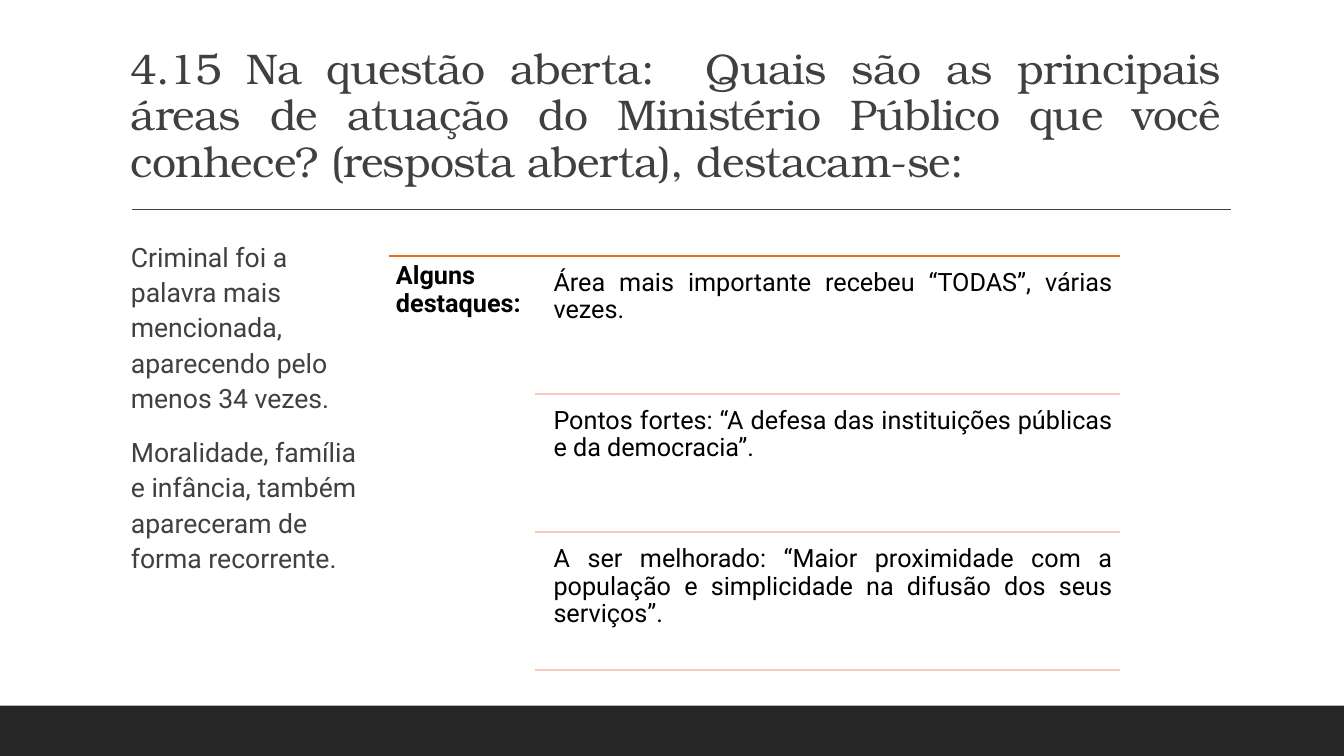
from dataclasses import dataclass

from lxml import etree
from pptx import Presentation
from pptx.dml.color import RGBColor
from pptx.enum.shapes import MSO_CONNECTOR, MSO_SHAPE
from pptx.enum.text import MSO_ANCHOR, PP_ALIGN
from pptx.oxml.ns import qn
from pptx.slide import Slide
from pptx.util import Cm, Pt

STRAIGHT = MSO_CONNECTOR.STRAIGHT
RECTANGLE = MSO_SHAPE.RECTANGLE
TOP, BOTTOM = MSO_ANCHOR.TOP, MSO_ANCHOR.BOTTOM
LEFT, JUSTIFY = PP_ALIGN.LEFT, PP_ALIGN.JUSTIFY


@dataclass(frozen=True)
class Theme:
    title_font: str = "TeX Gyre Bonum"
    body_font: str = "Roboto"
    title_size: float = 30.6
    body_size: float = 19
    panel_size: float = 18
    footer: str = "262626"
    grey: str = "404040"
    black: str = "000000"
    accent: str = "EC7016"
    pale: str = "F6C9BD"


THEME = Theme()


@dataclass(frozen=True)
class TextStyle:
    font: str
    size: float
    color: str
    align: PP_ALIGN = LEFT
    bold: bool = False
    line_spacing: float = 0.9
    before: float = 0
    after: float = 0
    tracking: int = 0  # hundredths of a point


@dataclass(frozen=True)
class TextBlock:
    left: float
    top: float
    width: float
    height: float
    paragraphs: tuple[str, ...]
    style: TextStyle
    inset_x: float = 0.18
    inset_y: float = 0.18
    anchor: MSO_ANCHOR = TOP


@dataclass(frozen=True)
class Rule:
    left: float
    right: float
    y: float
    color: str
    weight: float = 1.25


TITLE = TextStyle(THEME.title_font, THEME.title_size, THEME.grey, JUSTIFY, tracking=-50)
BODY = TextStyle(THEME.body_font, THEME.body_size, THEME.grey,
                 line_spacing=1.1, before=12, after=2)
LABEL = TextStyle(THEME.body_font, THEME.panel_size, THEME.black, bold=True)
HIGHLIGHT = TextStyle(THEME.body_font, THEME.panel_size, THEME.black, JUSTIFY)

PANEL_LEFT, PANEL_RIGHT, PANEL_TOP = 9.8, 28.22, 6.45
ROW_RULE_LEFT, ROW_TEXT_LEFT = 13.49, 13.77
ROW_PITCH, ROW_GAP, ROW_HEIGHT = 3.48, 0.17, 3.3

HIGHLIGHTS = (
    "Área mais importante recebeu “TODAS”, várias vezes.",
    "Pontos fortes: “A defesa das instituições públicas e da democracia”.",
    "A ser melhorado: “Maior proximidade com a população e simplicidade na "
    "difusão dos seus serviços”.",
)

BLOCKS = (
    TextBlock(3.05, 0.79, 27.94, 4.04, (
        "4.15 Na questão aberta:  Quais são as principais áreas de atuação do "
        "Ministério Público que você conhece? (resposta aberta), destacam-se:",
    ), TITLE, 0.25, 0.13, BOTTOM),
    TextBlock(3.05, 5.87, 6.17, 9.88, (
        "Criminal foi a palavra mais mencionada, aparecendo pelo menos 34 vezes.",
        "Moralidade, família e infância, também apareceram de forma recorrente.",
    ), BODY, 0.25, 0.13),
    TextBlock(PANEL_LEFT, PANEL_TOP, 3.68, 10.59, ("Alguns destaques:",), LABEL),
)

RULES = (
    Rule(3.33, 31.01, 5.28, THEME.grey, 1),
    Rule(PANEL_LEFT, PANEL_RIGHT, PANEL_TOP, THEME.accent),
)


def add_footer(s: Slide) -> None:
    bar = s.shapes.add_shape(RECTANGLE, Cm(0), Cm(17.78), Cm(33.87), Cm(1.27))
    bar.shadow.inherit = False
    bar.fill.solid()
    bar.fill.fore_color.rgb = RGBColor.from_string(THEME.footer)
    bar.line.fill.background()


def add_rule(s: Slide, rule: Rule) -> None:
    line = s.shapes.add_connector(STRAIGHT, Cm(rule.left), Cm(rule.y),
                                  Cm(rule.right), Cm(rule.y))
    line.line.color.rgb = RGBColor.from_string(rule.color)
    line.line.width = Pt(rule.weight)
    etree.SubElement(line._element.spPr, qn("a:effectLst"))


def add_text(s: Slide, block: TextBlock) -> None:
    sp = s.shapes.add_textbox(Cm(block.left), Cm(block.top),
                              Cm(block.width), Cm(block.height))
    tf = sp.text_frame
    tf.word_wrap = True
    tf.vertical_anchor = block.anchor
    tf.margin_left = tf.margin_right = Cm(block.inset_x)
    tf.margin_top = tf.margin_bottom = Cm(block.inset_y)
    if block.style is BODY:
        tf.margin_right = Cm(0)
    style = block.style
    for i, text in enumerate(block.paragraphs):
        p = tf.add_paragraph() if i else tf.paragraphs[0]
        p.alignment = style.align
        p.line_spacing = style.line_spacing
        p.space_before, p.space_after = Pt(style.before), Pt(style.after)
        r = p.add_run()
        r.text = text
        r.font.name, r.font.size, r.font.bold = style.font, Pt(style.size), style.bold
        r.font.color.rgb = RGBColor.from_string(style.color)
        if style.tracking:
            r.font._element.set("spc", str(style.tracking))


def add_highlight(s: Slide, row: int, text: str) -> None:
    """Draw one row of the panel with the rule that closes it."""
    top = PANEL_TOP + row * ROW_PITCH
    add_text(s, TextBlock(ROW_TEXT_LEFT, top + ROW_GAP, PANEL_RIGHT - ROW_TEXT_LEFT,
                          ROW_HEIGHT, (text,), HIGHLIGHT))
    add_rule(s, Rule(ROW_RULE_LEFT, PANEL_RIGHT, top + ROW_PITCH, THEME.pale))


def main() -> None:
    prs = Presentation()
    prs.slide_width, prs.slide_height = Cm(33.87), Cm(19.05)
    s = prs.slides.add_slide(prs.slide_layouts[6])
    add_footer(s)
    for rule in RULES:
        add_rule(s, rule)
    for block in BLOCKS:
        add_text(s, block)
    for row, text in enumerate(HIGHLIGHTS):
        add_highlight(s, row, text)
    prs.save("out.pptx")


if __name__ == "__main__":
    main()
